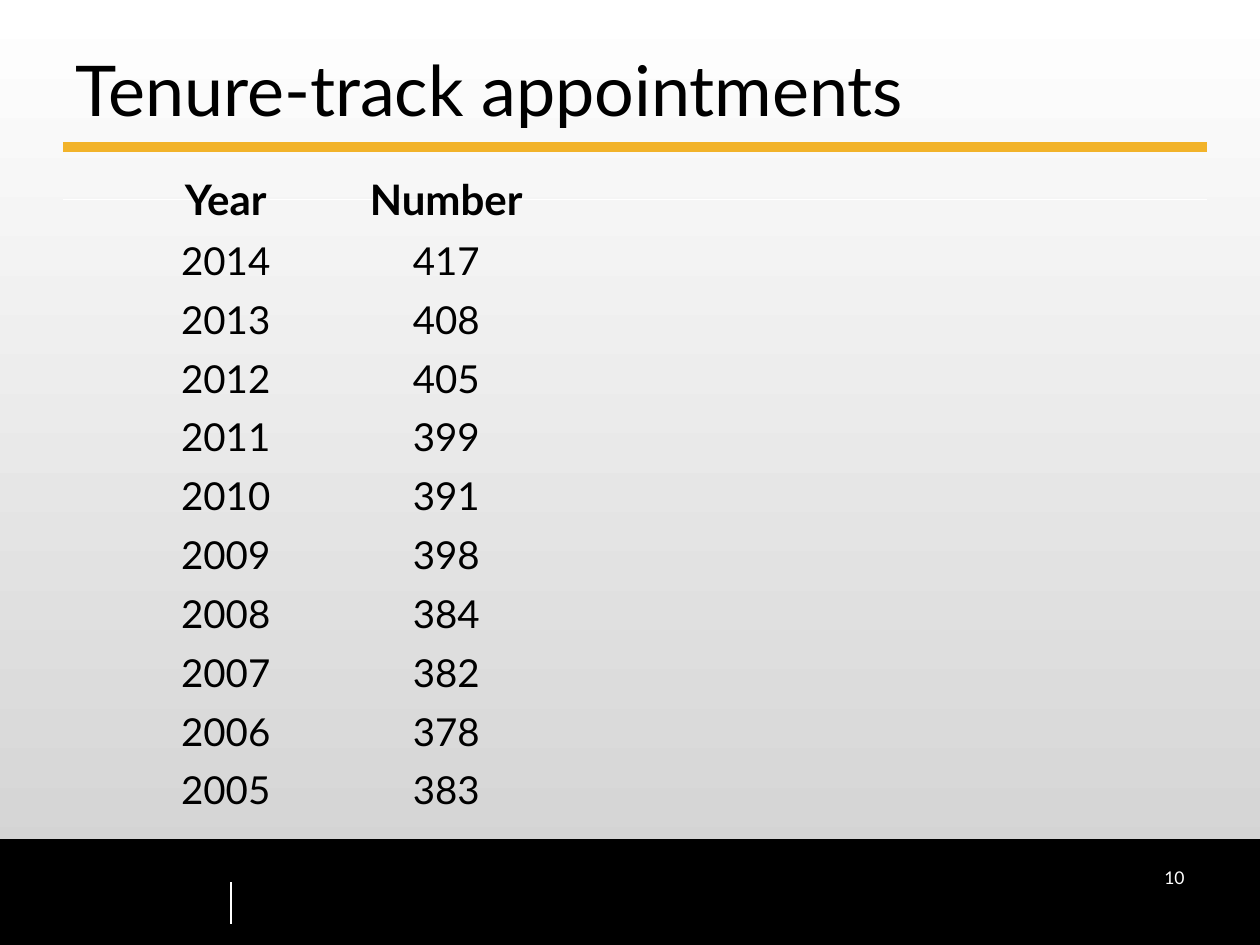
from dataclasses import dataclass

from lxml.etree import SubElement
from pptx import Presentation
from pptx.dml.color import RGBColor
from pptx.enum.shapes import MSO_CONNECTOR, MSO_SHAPE
from pptx.enum.text import MSO_ANCHOR, PP_ALIGN
from pptx.oxml.ns import qn
from pptx.util import Pt


@dataclass(frozen=True)
class Theme:
    """Colours, font and type sizes of the slide."""
    font: str = "Lato"
    black: str = "000000"
    white: str = "FFFFFF"
    grey: str = "D0D0D0"
    gold: str = "F2B32A"
    title: float = 40
    header: float = 24
    body: float = 22
    small: float = 10


THEME = Theme()
APPOINTMENTS = [
    (2014, 417), (2013, 408), (2012, 405), (2011, 399), (2010, 391),
    (2009, 398), (2008, 384), (2007, 382), (2006, 378), (2005, 383),
]


def rgb(code):
    """Turn a hex code into a colour."""
    return RGBColor.from_string(code)


def box(left, top, width, height):
    """Give a position and size in points."""
    return Pt(left), Pt(top), Pt(width), Pt(height)


def write(frame, text, size, color, align, bold=False):
    """Put one formatted paragraph into a text frame."""
    frame.text = text
    paragraph = frame.paragraphs[0]
    paragraph.alignment = align
    font = paragraph.font
    font.name, font.size, font.bold = THEME.font, Pt(size), bold
    font.color.rgb = rgb(color)


def paint_background(slide):
    """Fade the background from white at the top to grey."""
    fill = slide.background.fill
    fill.gradient()
    fill.gradient_angle = 270
    for stop, color, position in zip(fill.gradient_stops, (THEME.white, THEME.grey), (0, 1)):
        stop.color.rgb = rgb(color)
        stop.position = position


def add_footer_band(slide):
    """Draw the black band along the bottom edge."""
    band = slide.shapes.add_shape(MSO_SHAPE.RECTANGLE, *box(0, 480, 720, 60))
    band.shadow.inherit = False
    band.fill.solid()
    band.fill.fore_color.rgb = rgb(THEME.black)
    band.line.color.rgb = rgb(THEME.black)
    band.line.width = Pt(0.75)


def add_rule(slide, start, end, color, width):
    """Draw a straight rule between two points."""
    rule = slide.shapes.add_connector(MSO_CONNECTOR.STRAIGHT, *map(Pt, start + end))
    rule.line.color.rgb = rgb(color)
    rule.line.width = Pt(width)
    SubElement(rule._element.spPr, qn("a:effectLst"))


def add_title(slide, text):
    """Place and format the title placeholder."""
    title = slide.shapes.title
    title.left, title.top, title.width, title.height = box(36, 24, 648, 54)
    write(title.text_frame, text, THEME.title, THEME.black, PP_ALIGN.LEFT)
    title.text_frame.vertical_anchor = MSO_ANCHOR.BOTTOM


def add_page_number(slide, number):
    """Write the page number on the footer band."""
    frame = slide.shapes.add_textbox(*box(516, 492, 168, 36)).text_frame
    frame.word_wrap = True
    write(frame, number, THEME.small, THEME.white, PP_ALIGN.RIGHT)


def clear_cell(cell):
    """Remove the borders and fill of a table cell."""
    properties = cell._tc.get_or_add_tcPr()
    for side in ("a:lnL", "a:lnR", "a:lnT", "a:lnB"):
        SubElement(SubElement(properties, qn(side)), qn("a:noFill"))
    cell.fill.background()


def add_table(slide, header, records):
    """Add a plain centred table with a bold header row."""
    rows = [header, *records]
    table = slide.shapes.add_table(len(rows), len(header), *box(72, 96, 252, 372)).table
    table.first_row = table.horz_banding = False
    for column, width in zip(table.columns, (114, 138)):
        column.width = Pt(width)
    for index, values in enumerate(rows):
        is_header = index == 0
        table.rows[index].height = Pt(36 if is_header else 33.6)
        size = THEME.header if is_header else THEME.body
        for cell, value in zip(table.rows[index].cells, values):
            clear_cell(cell)
            write(cell.text_frame, str(value), size, THEME.black, PP_ALIGN.CENTER, is_header)


def main():
    """Build and save the slide."""
    deck = Presentation()
    deck.slide_width, deck.slide_height = Pt(720), Pt(540)
    slide = deck.slides.add_slide(deck.slide_layouts[5])
    paint_background(slide)
    add_footer_band(slide)
    add_rule(slide, (132, 504), (132, 528), THEME.white, 0.75)
    add_rule(slide, (36, 114), (690, 114), THEME.white, 0.75)
    add_rule(slide, (36, 84), (690, 84), THEME.gold, 6)
    add_title(slide, "Tenure-track appointments")
    add_page_number(slide, "10")
    add_table(slide, ("Year", "Number"), APPOINTMENTS)
    deck.save("out.pptx")


if __name__ == "__main__":
    main()
